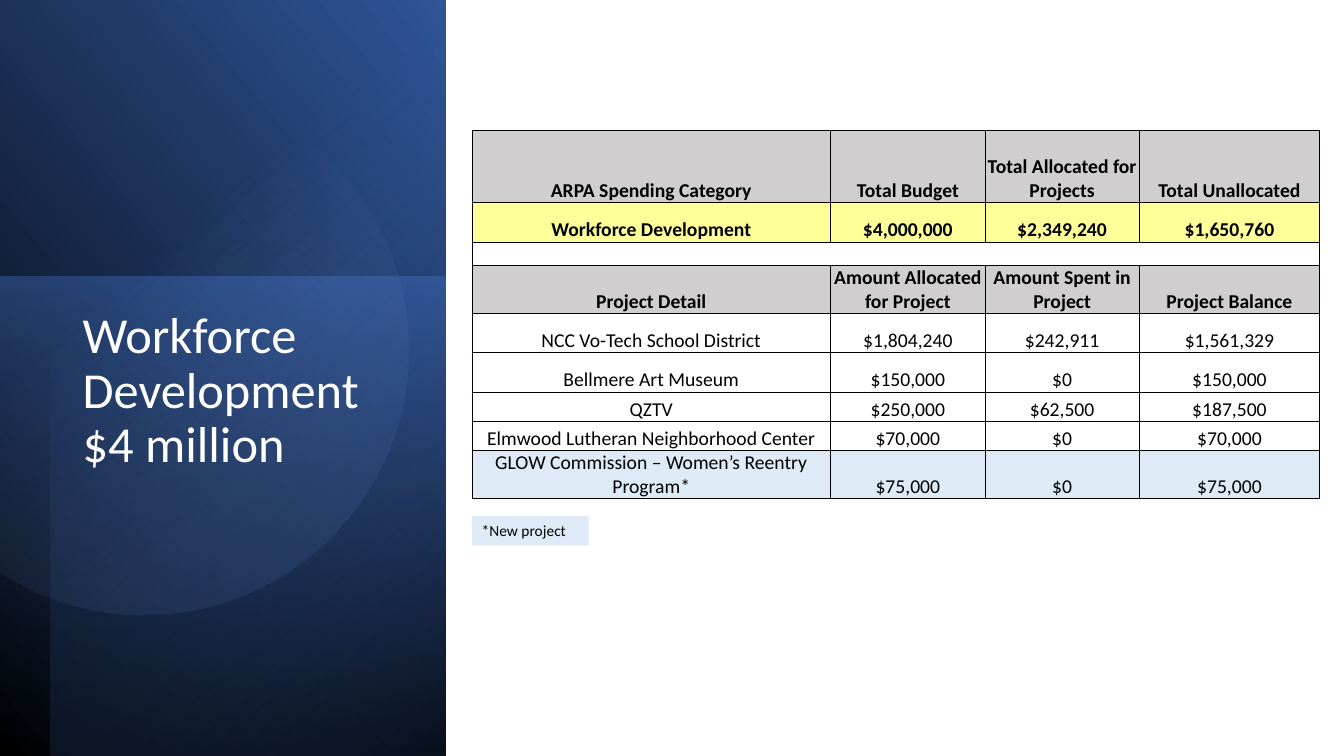
"""Builds the workforce development budget slide."""
import math

import lxml.etree
import pptx
import pptx.dml.color
import pptx.enum.shapes
import pptx.enum.text
import pptx.oxml
import pptx.oxml.ns
import pptx.util

Inches = pptx.util.Inches
RGB = pptx.dml.color.RGBColor
ALIGN = pptx.enum.text.PP_ALIGN
ANCHOR = pptx.enum.text.MSO_ANCHOR
FIT = pptx.enum.text.MSO_AUTO_SIZE

BLACK = RGB(0x00, 0x00, 0x00)
WHITE = RGB(0xFF, 0xFF, 0xFF)
BLUE = RGB(0x44, 0x72, 0xC4)
DEEP = RGB(0x2F, 0x55, 0x97)
NAVY = RGB(0x20, 0x38, 0x64)
SKY = RGB(0x8F, 0xAA, 0xDC)
GREY = RGB(0xD0, 0xCE, 0xCE)
YELLOW = RGB(0xFF, 0xFF, 0x99)
PALE = RGB(0xDE, 0xEB, 0xF7)

PANELS = [
    ((-1.55, 1.55, 7.52, 4.42), 90, True, 310, [(0, BLACK, 100), (100, DEEP, 100)]),
    ((-0.17, 2.91, 4.76, 4.42), 270, False, 190, [(0, BLUE, 50), (100, NAVY, 0)]),
    ((-1.29, 1.79, 7.5, 3.92), 270, True, 220, [(0, BLACK, 59), (69, BLUE, 0)]),
]
DISC_BOX = (-0.82, 1.31, 5.26, 4.47)
DISC_TURN = 101.6
DISC_STOPS = [(39, SKY, 0), (100, DEEP, 26)]

COLS = [3.56, 1.53, 1.53, 1.79]
ROWS = [
    (0.72, GREY, True, ["ARPA Spending Category", "Total Budget",
                        "Total Allocated for Projects", "Total Unallocated"]),
    (0.39, YELLOW, True, ["Workforce Development", "$4,000,000", "$2,349,240", "$1,650,760"]),
    (0.16, None, False, [""] * 4),
    (0.45, GREY, True, ["Project Detail", "Amount Allocated for Project",
                        "Amount Spent in Project", "Project Balance"]),
    (0.39, None, False, ["NCC Vo-Tech School District", "$1,804,240", "$242,911", "$1,561,329"]),
    (0.39, None, False, ["Bellmere Art Museum", "$150,000", "$0", "$150,000"]),
    (0.29, None, False, ["QZTV", "$250,000", "$62,500", "$187,500"]),
    (0.29, None, False, ["Elmwood Lutheran Neighborhood Center", "$70,000", "$0", "$70,000"]),
    (0.29, PALE, False, ["GLOW Commission – Women’s Reentry Program*",
                         "$75,000", "$0", "$75,000"]),
]
GAP_ROW = 2


def put(item, vals):
    """Set each attribute named in vals."""
    for name, val in vals.items():
        setattr(item, name, val)


def place(shape, box):
    """Move and size a shape in inches."""
    put(shape, dict(zip(("left", "top", "width", "height"), map(Inches, box))))


def style(font, size, color, bold=False):
    """Format a font."""
    put(font, {"name": "Calibri", "size": pptx.util.Pt(size), "bold": bold})
    font.color.rgb = color


def paint(cell, color):
    """Fill an item, or leave it clear."""
    if color is None:
        cell.fill.background()
    else:
        cell.fill.solid()
        cell.fill.fore_color.rgb = color


def blend(shape, stops, angle):
    """Give a shape a gradient with see-through stops."""
    marks = "".join(
        f'<a:gs pos="{pos * 1000}"><a:srgbClr val="{color}">'
        f'<a:alpha val="{alpha * 1000}"/></a:srgbClr></a:gs>'
        for pos, color, alpha in stops)
    grad = pptx.oxml.parse_xml(
        f'<a:gradFill {pptx.oxml.ns.nsdecls("a")} rotWithShape="1"><a:gsLst>{marks}</a:gsLst>'
        f'<a:lin ang="{angle * 60000}" scaled="0"/></a:gradFill>')
    shape.fill.background()
    props = shape.element.spPr
    props.replace(props.find(pptx.oxml.ns.qn("a:noFill")), grad)
    shape.line.fill.background()
    shape.shadow.inherit = False


def add_box(slide, box):
    """Add a plain rectangle."""
    shape = slide.shapes.add_shape(
        pptx.enum.shapes.MSO_SHAPE.RECTANGLE, *map(Inches, box))
    shape.line.fill.background()
    shape.shadow.inherit = False
    return shape


def add_panel(slide, box, turn, flip, angle, stops):
    """Add a turned gradient panel."""
    shape = add_box(slide, box)
    shape.rotation = turn
    if flip:
        shape.element.spPr.find(pptx.oxml.ns.qn("a:xfrm")).set("flipH", "1")
    blend(shape, stops, angle)


def add_disc(slide):
    """Add the disc that the slide's left edge cuts."""
    left, top, width, height = DISC_BOX
    mid_x, mid_y = left + width / 2, top + height / 2
    hub_x, hub_y, radius = 1.43, 3.47, 2.63
    reach = math.acos(-hub_x / radius)
    turn = math.radians(DISC_TURN)
    steps = 120
    points = []
    for step in range(steps + 1):
        arc = reach * (2 * step / steps - 1)
        x = hub_x + radius * math.cos(arc) - mid_x
        y = hub_y + radius * math.sin(arc) - mid_y
        points.append((Inches(mid_x + x * math.cos(turn) + y * math.sin(turn)),
                       Inches(mid_y - x * math.sin(turn) + y * math.cos(turn))))
    maker = slide.shapes.build_freeform(*points[0])
    maker.add_line_segments(points[1:], close=True)
    disc = maker.convert_to_shape()
    place(disc, DISC_BOX)
    disc.rotation = DISC_TURN
    blend(disc, DISC_STOPS, 310)


def add_title(slide):
    """Place the title in front of the panels."""
    title = slide.shapes.title
    place(title, (0.72, 3.03, 3.15, 3.36))
    frame = title.text_frame
    frame.text = "Workforce Development\v$4 million"
    put(frame, {"word_wrap": True, "auto_size": FIT.NONE, "vertical_anchor": ANCHOR.TOP})
    para = frame.paragraphs[0]
    put(para, {"alignment": ALIGN.LEFT, "line_spacing": 0.9})
    for run in para.runs:
        style(run.font, 36, WHITE)
    slide.shapes._spTree.append(title.element)


def edge(cell):
    """Draw thin black borders round a cell."""
    props = cell._tc.get_or_add_tcPr()
    for spot, side in enumerate("LRTB"):
        props.insert(spot, pptx.oxml.parse_xml(
            f'<a:ln{side} {pptx.oxml.ns.nsdecls("a")} w="6350"><a:solidFill>'
            f'<a:srgbClr val="{BLACK}"/></a:solidFill></a:ln{side}>'))


def fill_cell(cell, text, color, bold):
    """Write and format one table cell."""
    put(cell, {"vertical_anchor": ANCHOR.BOTTOM, "margin_left": 0, "margin_right": 0,
               "margin_top": 0, "margin_bottom": 0})
    para = cell.text_frame.paragraphs[0]
    para.alignment = ALIGN.CENTER
    if text:
        run = para.add_run()
        run.text = text
        style(run.font, 14, BLACK, bold)
    else:
        lxml.etree.SubElement(para._p, pptx.oxml.ns.qn("a:endParaRPr"), sz="1400")
    paint(cell, color)
    edge(cell)


def add_grid(slide):
    """Add the budget table."""
    box = map(Inches, (4.68, 1.29, sum(COLS), 3.65))
    grid = slide.shapes.add_table(len(ROWS), len(COLS), *box).table
    put(grid, {"first_row": False, "horz_banding": False})
    for col, width in zip(grid.columns, COLS):
        col.width = Inches(width)
    for row, (height, color, bold, texts) in zip(grid.rows, ROWS):
        row.height = Inches(height)
        for cell, text in zip(row.cells, texts):
            fill_cell(cell, text, color, bold)
    grid.cell(GAP_ROW, 0).merge(grid.cell(GAP_ROW, len(COLS) - 1))


def add_note(slide):
    """Add the key for new projects."""
    note = add_box(slide, (4.68, 5.12, 1.16, 0.29))
    paint(note, PALE)
    frame = note.text_frame
    put(frame, {"word_wrap": True, "auto_size": FIT.SHAPE_TO_FIT_TEXT,
                "vertical_anchor": ANCHOR.TOP})
    para = frame.paragraphs[0]
    put(para, {"text": "*New project", "alignment": ALIGN.LEFT})
    style(para.runs[0].font, 11, BLACK)


def main():
    """Build and save the slide."""
    deck = pptx.Presentation()
    put(deck, {"slide_width": Inches(13.33), "slide_height": Inches(7.5)})
    slide = deck.slides.add_slide(deck.slide_layouts[5])
    for panel in PANELS:
        add_panel(slide, *panel)
    add_disc(slide)
    add_title(slide)
    add_grid(slide)
    add_note(slide)
    deck.save("out.pptx")


if __name__ == "__main__":
    main()
